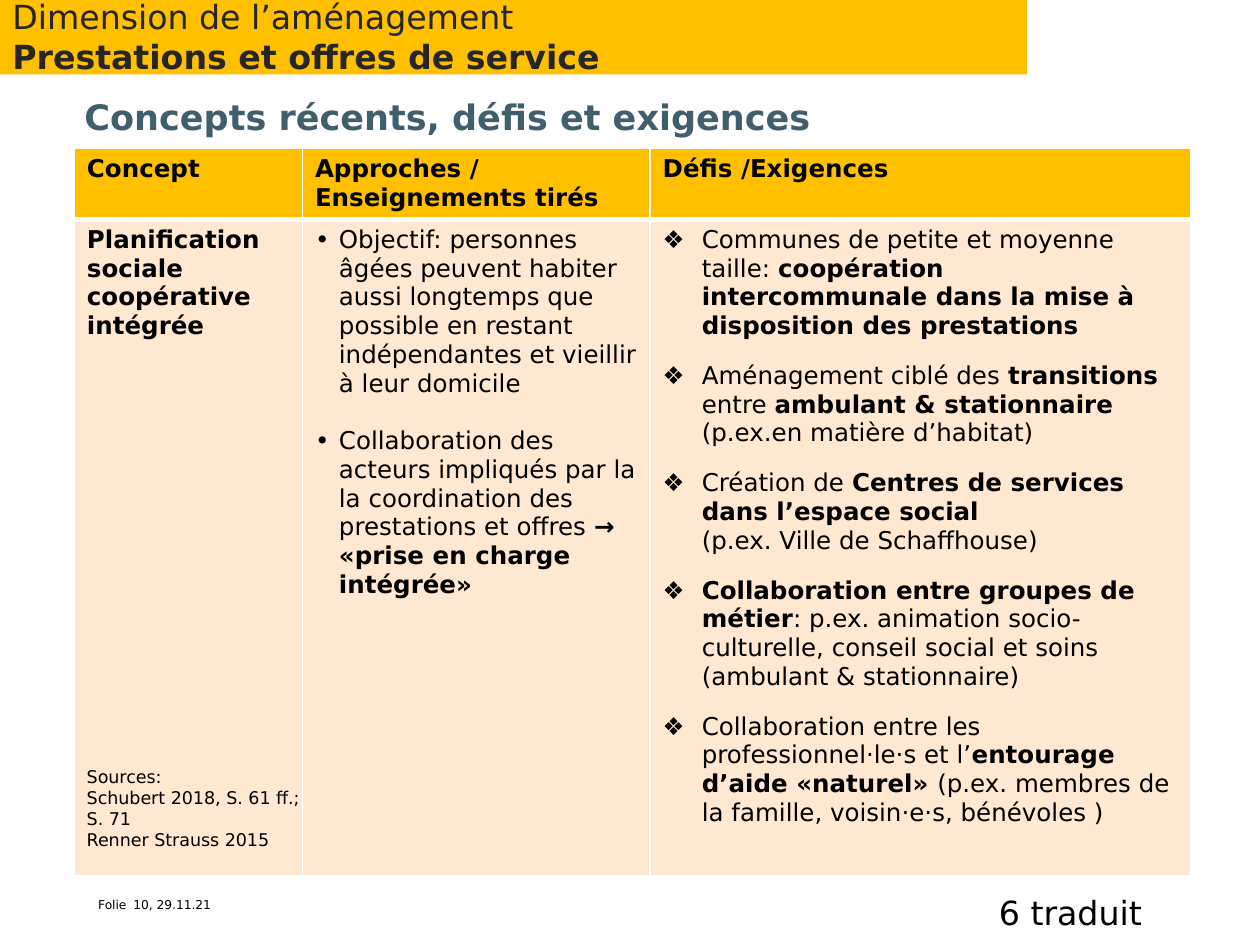
"""Build the slide on recent concepts, challenges and requirements of service provision."""
from dataclasses import dataclass
from typing import NamedTuple

import lxml.etree
import pptx
import pptx.dml.color
import pptx.enum.shapes
import pptx.enum.text
import pptx.oxml.ns
import pptx.util


@dataclass(frozen=True)
class Theme:
    font: str = "DejaVu Sans"
    black: str = "000000"
    banner_text: str = "262626"
    heading: str = "415E6C"
    accent: str = "FFC000"
    cell: str = "FFE8D1"
    border: str = "FFFFFF"
    heading_size: int = 20
    banner_size: int = 19
    table_size: int = 14
    source_size: int = 10
    footer_size: int = 7
    thin: int = 1
    thick: int = 3


class Area(NamedTuple):
    column: float
    row: float
    columns: float
    rows: float


class Span(NamedTuple):
    text: str
    bold: bool = False


@dataclass(frozen=True)
class Para:
    spans: tuple[Span, ...]
    size: float
    color: str = "000000"
    bullet: str = ""
    indent: float = 0
    before: float = 0


@dataclass(frozen=True)
class Label:
    area: Area
    paras: list[Para]
    inset: float


THEME = Theme()
GRID_COLUMNS = 100
UNIT = pptx.util.Inches(10) // GRID_COLUMNS
GRID_ROWS = 75


def grid(count: float) -> int:
    """Turn a number of grid units into a length."""
    return round(count * UNIT)


def place(shape, area: Area) -> None:
    """Move and size a shape on the grid."""
    shape.left, shape.top, shape.width, shape.height = map(grid, area)


def rgb(color: str) -> pptx.dml.color.RGBColor:
    """Read a colour value."""
    return pptx.dml.color.RGBColor.from_string(color)


def child(parent, tag: str, **attributes: str):
    """Append a DrawingML element."""
    return lxml.etree.SubElement(parent, pptx.oxml.ns.qn(tag), attributes)


def write(frame, paras: list[Para]) -> None:
    """Fill a text frame with formatted paragraphs."""
    for index, para in enumerate(paras):
        paragraph = frame.paragraphs[0] if index == 0 else frame.add_paragraph()
        paragraph.alignment = pptx.enum.text.PP_ALIGN.LEFT
        if para.bullet:
            properties = paragraph._p.get_or_add_pPr()
            properties.set("marL", str(grid(para.indent)))
            properties.set("indent", str(-grid(para.indent)))
            child(properties, "a:buFont", typeface=THEME.font)
            child(properties, "a:buChar", char=para.bullet)
        paragraph.space_before = pptx.util.Pt(para.before if index else 0)
        paragraph.font.name = THEME.font
        paragraph.font.size = pptx.util.Pt(para.size)
        paragraph.font.color.rgb = rgb(para.color)
        same_weight = len({span.bold for span in para.spans}) == 1
        if same_weight:
            paragraph.font.bold = para.spans[0].bold
        for span in para.spans:
            for number, line in enumerate(span.text.split("\n")):
                if number:
                    paragraph.add_line_break()
                if line:
                    run = paragraph.add_run()
                    run.text = line
                    if not same_weight:
                        run.font.bold = span.bold


def set_inset(frame, inset: float) -> None:
    """Give a text frame equal margins on all sides."""
    frame.margin_left = frame.margin_right = grid(inset)
    frame.margin_top = frame.margin_bottom = grid(inset)


def add_label(page, label: Label) -> None:
    """Add a wrapping text box."""
    box = page.shapes.add_textbox(*map(grid, label.area))
    box.text_frame.word_wrap = True
    if label.inset:
        set_inset(box.text_frame, label.inset)
    write(box.text_frame, label.paras)


def add_banner(page, area: Area, paras: list[Para]) -> None:
    """Add the coloured band at the top."""
    band = page.shapes.add_shape(pptx.enum.shapes.MSO_SHAPE.RECTANGLE, *map(grid, area))
    band.shadow.inherit = False
    band.fill.solid()
    band.fill.fore_color.rgb = rgb(THEME.accent)
    band.line.fill.background()
    band.text_frame.word_wrap = True
    band.text_frame.vertical_anchor = pptx.enum.text.MSO_ANCHOR.MIDDLE
    write(band.text_frame, paras)


def add_borders(cell, top: int, bottom: int) -> None:
    """Draw the four borders of a cell."""
    properties = cell._tc.get_or_add_tcPr()
    for side, width in zip("LRTB", (THEME.thin, THEME.thin, top, bottom)):
        line = child(properties, f"a:ln{side}", w=str(pptx.util.Pt(width)))
        child(child(line, "a:solidFill"), "a:srgbClr", val=THEME.border)


def add_concept_table(page, corner: tuple[float, float], columns: list[float],
                      rows: list[float], content: list[list[list[Para]]]) -> None:
    """Add the table with a header row and one concept row."""
    area = Area(*corner, sum(columns), sum(rows))
    table = page.shapes.add_table(len(rows), len(columns), *map(grid, area)).table
    table.horz_banding = False
    for column, width in zip(table.columns, columns):
        column.width = grid(width)
    for index, (row, height) in enumerate(zip(table.rows, rows)):
        row.height = grid(height)
        header = index == 0
        for cell, paras in zip(row.cells, content[index]):
            add_borders(cell, *((THEME.thin, THEME.thick) if header else (THEME.thick, THEME.thin)))
            cell.fill.solid()
            cell.fill.fore_color.rgb = rgb(THEME.accent if header else THEME.cell)
            write(cell.text_frame, paras)


def plain(text: str, size: float, bold: bool = False, color: str = THEME.black) -> Para:
    """Make a paragraph of one span."""
    return Para((Span(text, bold),), size, color)


def approach(*spans: Span) -> Para:
    """Make a bullet of the approaches column."""
    return Para(spans, THEME.table_size, bullet="•", indent=1.9, before=16.3)


def challenge(*spans: Span) -> Para:
    """Make a bullet of the challenges column."""
    return Para(spans, THEME.table_size, bullet="❖", indent=3.1, before=12)


HEADERS = ["Concept", "Approches / Enseignements tirés", "Défis /Exigences"]
APPROACHES = [
    approach(Span("Objectif: personnes âgées peuvent habiter aussi longtemps que possible "
                  "en restant indépendantes et vieillir à leur domicile")),
    approach(Span("Collaboration des acteurs impliqués par la la coordination des prestations et offres "),
             Span("→ «prise en charge intégrée»", True)),
]
CHALLENGES = [
    challenge(Span("Communes de petite et moyenne taille: "),
              Span("coopération intercommunale dans la mise à disposition des prestations", True)),
    challenge(Span("Aménagement ciblé des "), Span("transitions", True), Span(" entre "),
              Span("ambulant & stationnaire ", True), Span("(p.ex.en matière d’habitat)")),
    challenge(Span("Création de "), Span("Centres de services dans l’espace social\n", True),
              Span("(p.ex. Ville de Schaffhouse)")),
    challenge(Span("Collaboration entre groupes de métier", True),
              Span(": p.ex. animation socio-culturelle, conseil social et soins (ambulant & stationnaire)")),
    challenge(Span("Collaboration entre les professionnel·le·s et l’"),
              Span("entourage d’aide «naturel» ", True),
              Span("(p.ex. membres de la famille, voisin·e·s, bénévoles )")),
]
CONTENT = [
    [[plain(text, THEME.table_size, True)] for text in HEADERS],
    [[plain("Planification sociale coopérative intégrée", THEME.table_size, True)], APPROACHES, CHALLENGES],
]
BANNER = [
    plain("Dimension de l’aménagement", THEME.banner_size, color=THEME.banner_text),
    plain("Prestations et offres de service", THEME.banner_size, True, THEME.banner_text),
]
SOURCES = ["Sources:", "Schubert 2018, S. 61 ff.; S. 71", "Renner Strauss 2015"]
LABELS = [
    Label(Area(7, 70.6, 29.6, 3), [plain("Folie", THEME.footer_size)], 0.8),
    Label(Area(9.8, 70.6, 88.7, 4.4), [plain("10, 29.11.21", THEME.footer_size)], 0.8),
    Label(Area(5.9, 60.3, 19.3, 7.7), [plain(text, THEME.source_size) for text in SOURCES], 0),
    Label(Area(78.3, 70.3, 13.7, 4.2), [plain("6 traduit", THEME.banner_size)], 0),
]


def main() -> None:
    """Build and save the deck."""
    deck = pptx.Presentation()
    deck.slide_width, deck.slide_height = grid(GRID_COLUMNS), grid(GRID_ROWS)
    page = deck.slides.add_slide(deck.slide_layouts[5])
    title = page.shapes.title
    place(title, Area(5.9, 5.7, 92.9, 6))
    set_inset(title.text_frame, 0.8)
    title.text_frame.vertical_anchor = pptx.enum.text.MSO_ANCHOR.BOTTOM
    title.text_frame.auto_size = pptx.enum.text.MSO_AUTO_SIZE.NONE
    write(title.text_frame, [plain("Concepts récents, défis et exigences", THEME.heading_size, True, THEME.heading)])
    add_concept_table(page, (5.9, 11.8), [18.1, 27.6, 42.9], [5.6, 52.1], CONTENT)
    add_banner(page, Area(0, -0.1, 81.5, 6), BANNER)
    for label in LABELS:
        add_label(page, label)
    deck.save("out.pptx")


if __name__ == "__main__":
    main()
